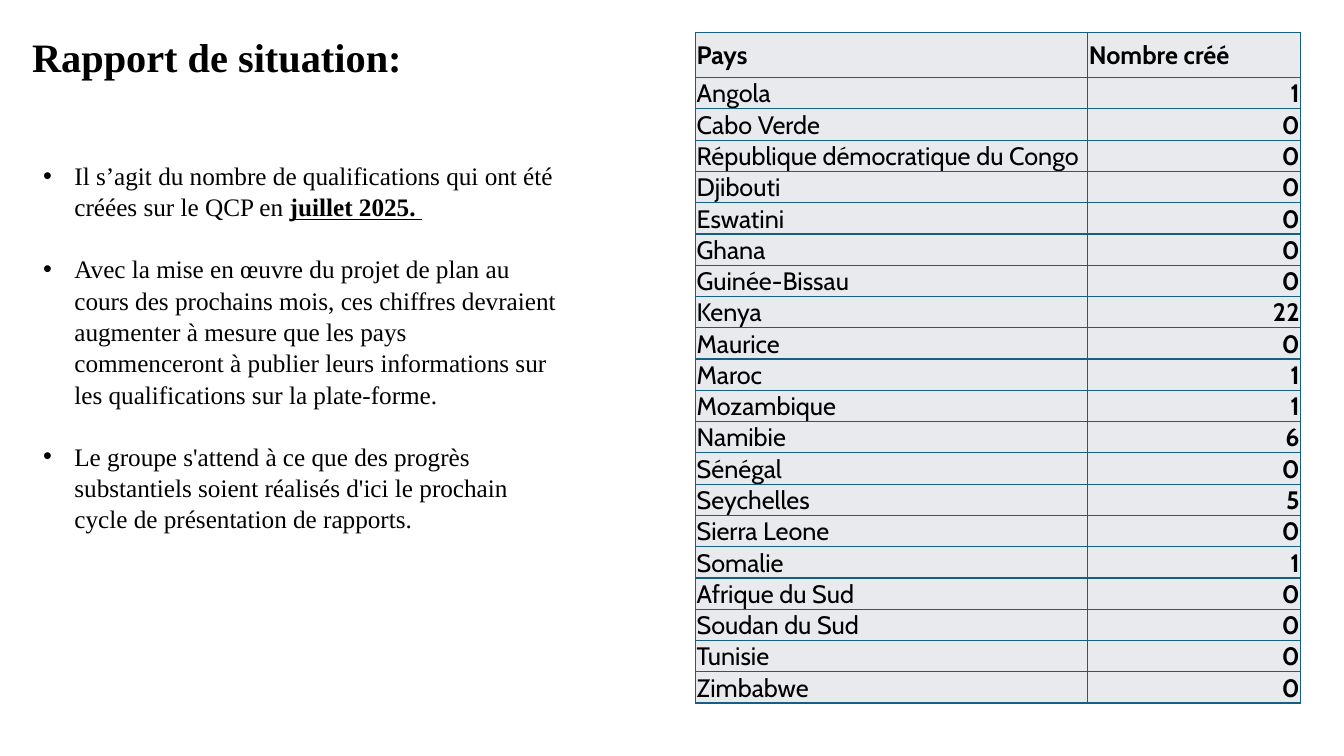
import pptx
import pptx.util
import pptx.dml.color
import pptx.enum.text
import pptx.oxml
import pptx.oxml.ns

WIDE, HIGH = 13.33, 7.5
HUES = {"ink": "000000", "cell": "E8EAED", "rule": "156082"}
SERIF, SANS = "Times New Roman", "Cabin"
TITLE = "Rapport de situation:"
NOTES = [
    [("Il s’agit du nombre de qualifications qui ont été créées sur le QCP en ", False),
     ("juillet 2025.", True), (" ", "under")],
    [("Avec la mise en œuvre du projet de plan au cours des prochains mois, ces "
      "chiffres devraient augmenter à mesure que les pays commenceront à publier "
      "leurs informations sur les qualifications sur la plate-forme.", False)],
    [("Le groupe s'attend à ce que des progrès substantiels soient réalisés d'ici "
      "le prochain cycle de présentation de rapports.", False)],
]
HEADS = ("Pays", "Nombre créé")
COUNTS = [
    ("Angola", 1), ("Cabo Verde", 0), ("République démocratique du Congo", 0),
    ("Djibouti", 0), ("Eswatini", 0), ("Ghana", 0), ("Guinée-Bissau", 0),
    ("Kenya", 22), ("Maurice", 0), ("Maroc", 1), ("Mozambique", 1),
    ("Namibie", 6), ("Sénégal", 0), ("Seychelles", 5), ("Sierra Leone", 0),
    ("Somalie", 1), ("Afrique du Sud", 0), ("Soudan du Sud", 0),
    ("Tunisie", 0), ("Zimbabwe", 0),
]


def inch(size):
    """Turn inches into slide units."""
    return pptx.util.Inches(size)


def style(run, face, size, bold=False):
    """Set the font of one run."""
    run.font.name = face
    run.font.size = pptx.util.Pt(size)
    run.font.bold = bold
    run.font.color.rgb = pptx.dml.color.RGBColor.from_string(HUES["ink"])


def add_box(slide, left, top, width, height):
    """Add a wrapping text box and return its frame."""
    frame = slide.shapes.add_textbox(*map(inch, (left, top, width, height))).text_frame
    frame.word_wrap = True
    return frame


def add_title(slide):
    """Add the heading at the top left."""
    frame = add_box(slide, 0.22, 0.06, 4.22, 1.05)
    frame.vertical_anchor = pptx.enum.text.MSO_ANCHOR.MIDDLE
    frame.text = TITLE
    frame.paragraphs[0].line_spacing = 0.9
    style(frame.paragraphs[0].runs[0], SERIF, 28.8, True)


def add_bullet(para):
    """Give a paragraph a hanging round bullet."""
    props = para._p.get_or_add_pPr()
    props.set("marL", str(inch(0.31)))
    props.set("indent", str(-inch(0.31)))
    space = pptx.oxml.ns.nsdecls("a")
    for mark in ('buFont %s typeface="Arial"', 'buChar %s char="•"'):
        props.append(pptx.oxml.parse_xml("<a:" + mark % space + "/>"))


def add_notes(slide):
    """Add the bulleted remarks on the left."""
    frame = add_box(slide, 0.33, 1.53, 5.3, 4.64)
    for index, parts in enumerate(NOTES):
        para = frame.add_paragraph() if index else frame.paragraphs[0]
        para.line_spacing = 1.04
        para.space_before = pptx.util.Pt(21.6 if index else 0)
        add_bullet(para)
        for words, stress in parts:
            run = para.add_run()
            run.text = words
            style(run, SERIF, 18, stress is True)
            run.font.underline = bool(stress)


def add_edges(cell):
    """Draw the four thin borders of a cell."""
    props = cell._tc.get_or_add_tcPr()
    for spot, side in enumerate(("lnL", "lnR", "lnT", "lnB")):
        props.insert(spot, pptx.oxml.parse_xml(
            f'<a:{side} {pptx.oxml.ns.nsdecls("a")} w="{pptx.util.Pt(1)}"><a:solidFill>'
            f'<a:srgbClr val="{HUES["rule"]}"/></a:solidFill></a:{side}>'))


def fill_cell(cell, words, head, number):
    """Write and format one table cell."""
    anchor = pptx.enum.text.MSO_ANCHOR
    cell.margin_left = cell.margin_right = cell.margin_top = inch(0.01)
    cell.margin_bottom = 0
    cell.vertical_anchor = anchor.MIDDLE if head else anchor.BOTTOM
    cell.fill.solid()
    cell.fill.fore_color.rgb = pptx.dml.color.RGBColor.from_string(HUES["cell"])
    add_edges(cell)
    cell.text_frame.text = words
    para = cell.text_frame.paragraphs[0]
    if number and not head:
        para.alignment = pptx.enum.text.PP_ALIGN.RIGHT
    style(para.runs[0], SANS, 18, head or number)


def add_counts(slide):
    """Add the table of countries and their counts."""
    rows = [HEADS] + COUNTS
    frame = slide.shapes.add_table(len(rows), 2, *map(inch, (6.9, 0.32, 6, 6.65)))
    table = frame.table
    for column, width in zip(table.columns, (3.89, 2.11)):
        column.width = inch(width)
    for y, row in enumerate(rows):
        table.rows[y].height = inch(0.31 if y else 0.45)
        for x, value in enumerate(row):
            fill_cell(table.cell(y, x), str(value), y == 0, x == 1)


def main():
    """Build the slide and save it."""
    deck = pptx.Presentation()
    deck.slide_width, deck.slide_height = inch(WIDE), inch(HIGH)
    slide = deck.slides.add_slide(deck.slide_layouts[6])
    add_title(slide)
    add_counts(slide)
    add_notes(slide)
    deck.save("out.pptx")


if __name__ == "__main__":
    main()
